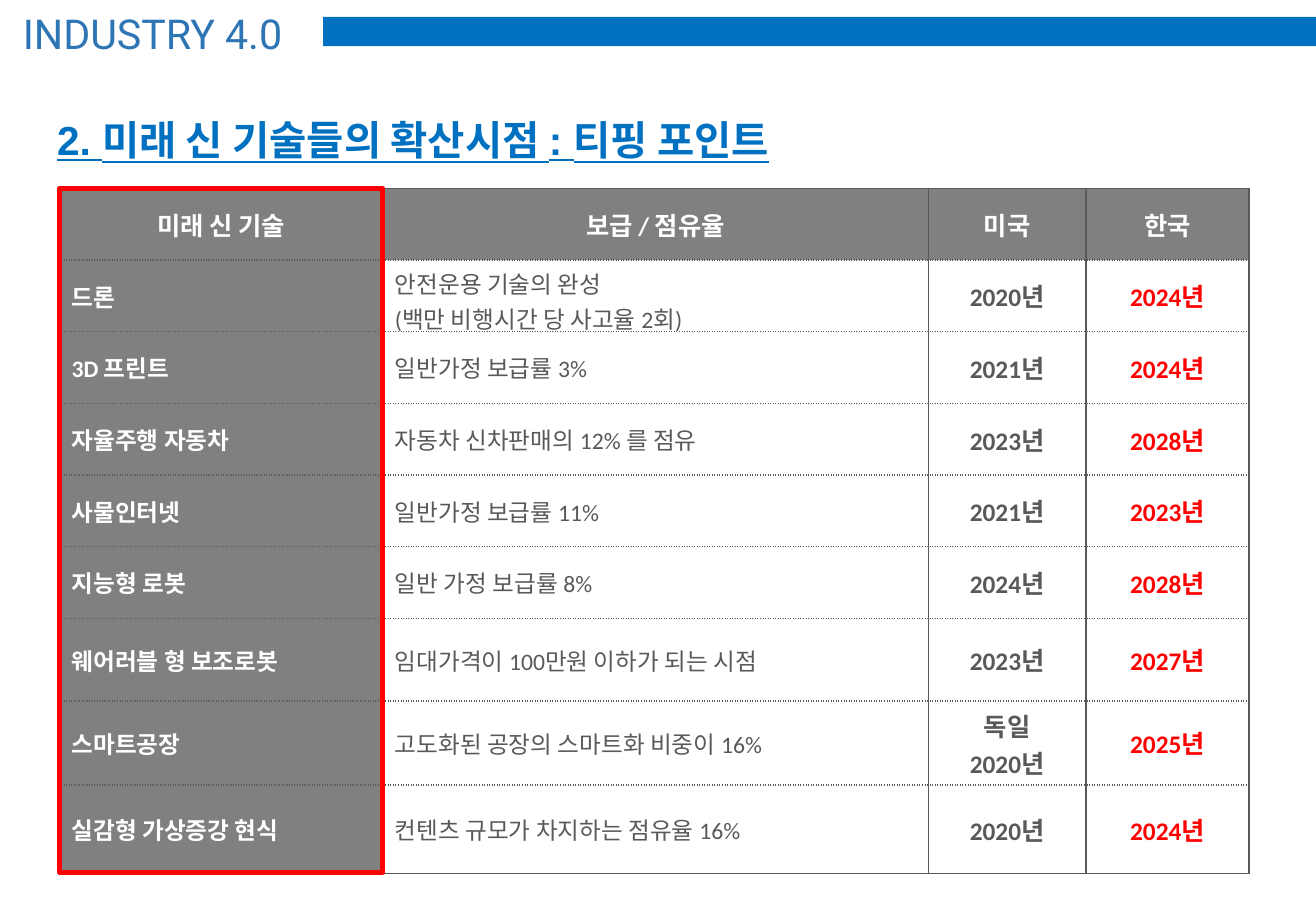
import pptx
import pptx.util
import pptx.dml.color
import pptx.enum.shapes
import pptx.enum.text
import pptx.oxml
import pptx.oxml.ns

Align = pptx.enum.text.PP_ALIGN
Anchor = pptx.enum.text.MSO_ANCHOR
RECTANGLE = pptx.enum.shapes.MSO_SHAPE.RECTANGLE

COLORS = {
    "bar": "0070C0",
    "banner": "2E75B6",
    "header": "808080",
    "white": "FFFFFF",
    "ink": "595959",
    "red": "FF0000",
}

SLIDE_WIDTH = pptx.util.Inches(10.83)
SLIDE_HEIGHT = pptx.util.Inches(7.5)

# Shares of the slide's width and height, in percent
TABLE_LEFT, TABLE_TOP = 4.52, 20.67
COLUMN_SHARES = [24.56, 41.46, 12, 12.37]
ROW_SHARES = [7.87] * 6 + [9.07, 9.2, 9.73]
HIGHLIGHT_HEIGHT = 75.07

FORECASTS = [
    ("미래 신 기술", "보급 / 점유율", "미국", "한국"),
    ("드론", "안전운용 기술의 완성\n(백만 비행시간 당 사고율 2회)", "2020년", "2024년"),
    ("3D 프린트", "일반가정 보급률 3%", "2021년", "2024년"),
    ("자율주행 자동차", "자동차 신차판매의 12% 를 점유", "2023년", "2028년"),
    ("사물인터넷", "일반가정 보급률 11%", "2021년", "2023년"),
    ("지능형 로봇", "일반 가정 보급률 8%", "2024년", "2028년"),
    ("웨어러블 형 보조로봇", "임대가격이 100만원 이하가 되는 시점", "2023년", "2027년"),
    ("스마트공장", "고도화된 공장의 스마트화 비중이 16%", "독일\n2020년", "2025년"),
    ("실감형 가상증강 현식", "컨텐츠 규모가 차지하는 점유율 16%", "2020년", "2024년"),
]

# Size, colour, bold and alignment
HEADER_STYLE = (15, "white", True, Align.CENTER)
COLUMN_STYLES = [
    (14, "white", True, Align.LEFT),
    (14, "ink", False, Align.LEFT),
    (15, "ink", True, Align.CENTER),
    (15, "red", True, Align.CENTER),
]


def rgb(name):
    return pptx.dml.color.RGBColor.from_string(COLORS[name])


def across(percent):
    return round(SLIDE_WIDTH * percent / 100)


def down(percent):
    return round(SLIDE_HEIGHT * percent / 100)


def area(left, top, width, height):
    """Turn percentages of the slide into a position and size."""
    return across(left), down(top), across(width), down(height)


def format_text(frame, typeface, size, color, bold=False, align=Align.LEFT):
    for paragraph in frame.paragraphs:
        paragraph.alignment = align
        paragraph.font.name = typeface
        paragraph.font.size = pptx.util.Pt(size)
        paragraph.font.bold = bold
        paragraph.font.color.rgb = rgb(color)


def add_rectangle(slide, place, fill=None, outline=None):
    rectangle = slide.shapes.add_shape(RECTANGLE, *place)
    rectangle.shadow.inherit = False
    if fill:
        rectangle.fill.solid()
        rectangle.fill.fore_color.rgb = rgb(fill)
    else:
        rectangle.fill.background()
    if outline:
        rectangle.line.color.rgb = rgb(outline)
        rectangle.line.width = pptx.util.Pt(3)
    else:
        rectangle.line.fill.background()


def add_banner(slide):
    add_rectangle(slide, area(24.56, 1.87, 75.44, 3.2), fill="bar")
    banner = slide.shapes.add_textbox(*area(0.83, -0.4, 66.67, 8.67)).text_frame
    banner.word_wrap = True
    banner.vertical_anchor = Anchor.MIDDLE
    banner.text = "INDUSTRY 4.0"
    banner.paragraphs[0].line_spacing = 0.9
    format_text(banner, "Roboto", 24.4, "banner")


def set_title(slide):
    title = slide.shapes.title
    title.left, title.top, title.width, title.height = area(3.42, 11.2, 90.4, 7.07)
    frame = title.text_frame
    frame.text = "2. 미래 신 기술들의 확산시점 : 티핑 포인트"
    frame.word_wrap = True
    frame.auto_size = pptx.enum.text.MSO_AUTO_SIZE.SHAPE_TO_FIT_TEXT
    frame.vertical_anchor = Anchor.TOP
    format_text(frame, "Arial", 24, "bar", bold=True)
    heading = frame.paragraphs[0]
    heading.font.underline = True
    heading.line_spacing = 1.15
    heading.space_after = pptx.util.Pt(10)


def set_borders(cell, first_row, last_row):
    """Draw solid outer and vertical edges, and dotted lines between rows."""
    dashes = {
        "lnL": "solid",
        "lnR": "solid",
        "lnT": "solid" if first_row else "sysDot",
        "lnB": "solid" if last_row else "sysDot",
    }
    properties = cell._tc.get_or_add_tcPr()
    for edge, dash in dashes.items():
        properties.append(pptx.oxml.parse_xml(
            f'<a:{edge} {pptx.oxml.ns.nsdecls("a")} w="{pptx.util.Pt(1)}">'
            f'<a:solidFill><a:srgbClr val="{COLORS["ink"]}"/></a:solidFill>'
            f'<a:prstDash val="{dash}"/></a:{edge}>'))


def add_forecast_table(slide):
    place = area(TABLE_LEFT, TABLE_TOP, sum(COLUMN_SHARES), sum(ROW_SHARES))
    table = slide.shapes.add_table(len(ROW_SHARES), len(COLUMN_SHARES), *place).table
    table.horz_banding = False
    table.first_row = False
    for column, share in zip(table.columns, COLUMN_SHARES):
        column.width = across(share)
    for row, share in zip(table.rows, ROW_SHARES):
        row.height = down(share)

    for row_index, forecast in enumerate(FORECASTS):
        is_header = row_index == 0
        for column_index, wording in enumerate(forecast):
            cell = table.cell(row_index, column_index)
            cell.text = wording
            cell.vertical_anchor = Anchor.MIDDLE
            style = HEADER_STYLE if is_header else COLUMN_STYLES[column_index]
            format_text(cell.text_frame, "Calibri", *style)
            set_borders(cell, is_header, row_index == len(FORECASTS) - 1)
            if is_header or column_index == 0:
                cell.fill.solid()
                cell.fill.fore_color.rgb = rgb("header")
            else:
                cell.fill.background()


def main():
    presentation = pptx.Presentation()
    presentation.slide_width = SLIDE_WIDTH
    presentation.slide_height = SLIDE_HEIGHT
    slide = presentation.slides.add_slide(presentation.slide_layouts.get_by_name("Title Only"))

    add_banner(slide)
    set_title(slide)
    add_forecast_table(slide)
    technology_column = area(TABLE_LEFT, TABLE_TOP, COLUMN_SHARES[0], HIGHLIGHT_HEIGHT)
    add_rectangle(slide, technology_column, outline="red")

    presentation.save("out.pptx")


if __name__ == "__main__":
    main()
